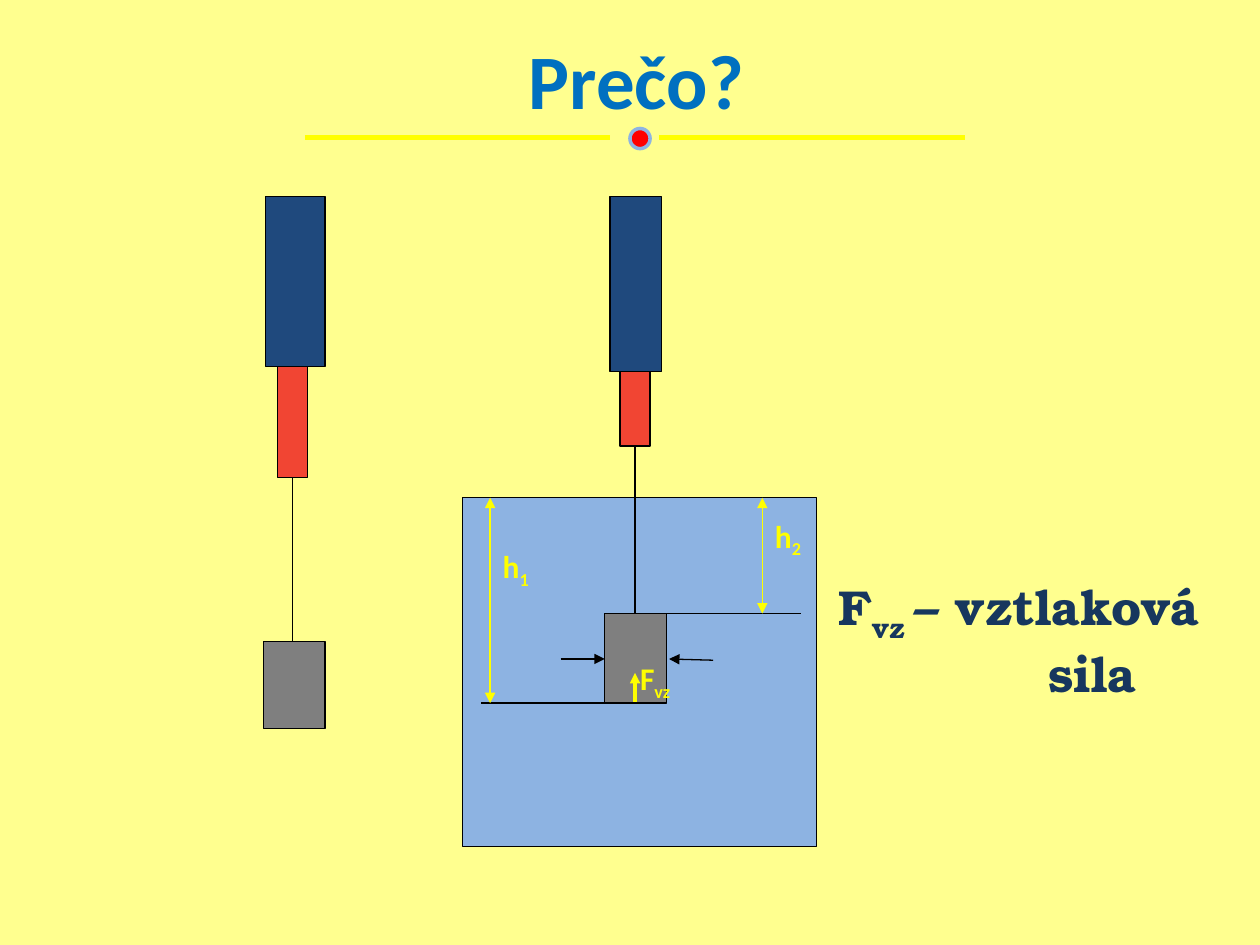
from pptx import Presentation
from pptx.dml.color import RGBColor
from pptx.enum.shapes import MSO_CONNECTOR, MSO_SHAPE as SHAPE
from pptx.enum.text import MSO_ANCHOR as ANCHOR, PP_ALIGN as ALIGN
from pptx.oxml.ns import qn
from pptx.util import Inches, Pt
from lxml.etree import SubElement

THEME = {
    "background": "FFFF8F", "title": "0070C0", "force": "17375E",
    "black": "000000", "yellow": "FFFF00", "red": "FF0000", "ring": "8EB4E3",
    "body": "1F497D", "plunger": "F14533", "weight": "7F7F7F", "water": "8DB3E2",
    "sans": "Calibri", "serif": "TeX Gyre Bonum",
    "title_size": 44, "force_size": 28, "label_size": 18,
    "thin": 0.75, "medium": 2, "thick": 3,
}

TITLE = "Prečo?"
FORCE_TEXT = [("F", False), ("vz ", True), ("– vztlaková sila", False)]

SURFACE, BLOCK_TOP, BLOCK_BOTTOM = 3.95, 4.87, 5.58
TANK = (3.67, SURFACE, 2.81, 2.77)
SCALES = [
    {"body": (2.11, 1.56, 0.47, 1.35), "plunger": (2.2, 2.91, 0.24, 0.88),
     "weight": (2.09, 5.09, 0.49, 0.69)},
    {"body": (4.84, 1.56, 0.41, 1.39), "plunger": (4.92, 2.95, 0.24, 0.59),
     "weight": (4.8, BLOCK_TOP, 0.49, BLOCK_BOTTOM - BLOCK_TOP)},
]
TITLE_RULES = [(2.42, 4.84), (5.23, 7.66)]
LEVEL_LINES = [(5.04, 3.82, BLOCK_BOTTOM), (5.16, 6.36, BLOCK_TOP)]
DEPTHS = [
    {"x": 3.89, "bottom": BLOCK_BOTTOM, "index": "1", "label": (3.99, 4.34, 0.37, 0.37)},
    {"x": 6.05, "bottom": BLOCK_TOP, "index": "2", "label": (6.15, 4.1, 0.26, 0.37)},
]
SIDE_ARROWS = [((4.45, 5.23), (4.8, 5.23)), ((5.66, 5.24), (5.31, 5.23))]
FORCE_ARROW = ((5.04, 5.57), (5.04, 5.34))


def color(name):
    return RGBColor.from_string(THEME[name])


def add_shape(page, box, fill, line="black", width="thin", kind=SHAPE.RECTANGLE):
    shape = page.shapes.add_shape(kind, *map(Inches, box))
    shape.shadow.inherit = False
    shape.fill.solid()
    shape.fill.fore_color.rgb = color(fill)
    shape.line.color.rgb = color(line)
    shape.line.width = Pt(THEME[width])
    return shape


def add_line(page, start, end, line="black", width="thin", arrows=()):
    connector = page.shapes.add_connector(
        MSO_CONNECTOR.STRAIGHT, *map(Inches, start + end))
    connector.line.color.rgb = color(line)
    connector.line.width = Pt(THEME[width])
    outline = connector.line._get_or_add_ln()
    for arrow in arrows:
        SubElement(outline, qn(f"a:{arrow}"), type="triangle")
    SubElement(connector._element.spPr, qn("a:effectLst"))


def write(shape, spans, font, size, tint, margin=None, anchor=ANCHOR.TOP, align=ALIGN.LEFT):
    frame = shape.text_frame
    frame.word_wrap = True
    frame.vertical_anchor = anchor
    if margin is not None:
        frame.margin_left = frame.margin_right = Inches(margin)
        frame.margin_top = frame.margin_bottom = Inches(margin)
    para = frame.paragraphs[0]
    para.alignment = align
    para.font.name, para.font.size = THEME[font], Pt(THEME[size])
    para.font.bold, para.font.color.rgb = True, color(tint)
    for words, lowered in spans:
        span = para.add_run()
        span.text = words
        if lowered:
            span.font._element.set("baseline", "-25000")
    return para


def add_text(page, box, *args, **options):
    return write(page.shapes.add_textbox(*map(Inches, box)), *args, **options)


def add_title(page):
    add_text(page, (0.55, 0, 9, 1.25), [(TITLE, False)], "sans", "title_size", "title",
             anchor=ANCHOR.MIDDLE, align=ALIGN.CENTER)
    for left, right in TITLE_RULES:
        add_line(page, (left, 1.09), (right, 1.09), "yellow", "thick")
    add_shape(page, (5, 1.02, 0.16, 0.16), "red", "ring", "medium", SHAPE.OVAL)


def add_scale(page, parts):
    for name, box in parts.items():
        add_shape(page, box, name)
    left, top, width, height = parts["plunger"]
    middle = left + width / 2
    add_line(page, (middle, top + height), (middle, parts["weight"][1]))


def add_depths(page):
    for start, end, level in LEVEL_LINES:
        add_line(page, (start, level), (end, level))
    for depth in DEPTHS:
        add_line(page, (depth["x"], SURFACE), (depth["x"], depth["bottom"]),
                 "yellow", arrows=("headEnd", "tailEnd"))
        label = add_shape(page, depth["label"], "water", "water")
        para = write(label, [("h", False), (depth["index"], True)],
                     "sans", "label_size", "yellow", margin=0)
        para.space_after = Pt(10)


def add_forces(page):
    for start, end in SIDE_ARROWS:
        add_line(page, start, end, arrows=("tailEnd",))
    add_line(page, *FORCE_ARROW, "yellow", "medium", ("tailEnd",))
    add_text(page, (5.08, 5.23, 0.47, 0.3), [("F", False), ("vz", True)],
             "sans", "label_size", "yellow", margin=0)
    para = add_text(page, (6.56, 4.53, 3.44, 1.04), FORCE_TEXT,
                    "serif", "force_size", "force")
    hanging = Inches(1.66)
    layout = para._p.get_or_add_pPr()
    layout.set("marL", str(hanging))
    layout.set("indent", str(-hanging))


def main():
    deck = Presentation()
    deck.slide_width, deck.slide_height = Inches(10), Inches(7.5)
    page = deck.slides.add_slide(deck.slide_layouts[6])
    page.background.fill.solid()
    page.background.fill.fore_color.rgb = color("background")
    add_title(page)
    add_shape(page, TANK, "water")
    for parts in SCALES:
        add_scale(page, parts)
    add_depths(page)
    add_forces(page)
    deck.save("out.pptx")


if __name__ == "__main__":
    main()
